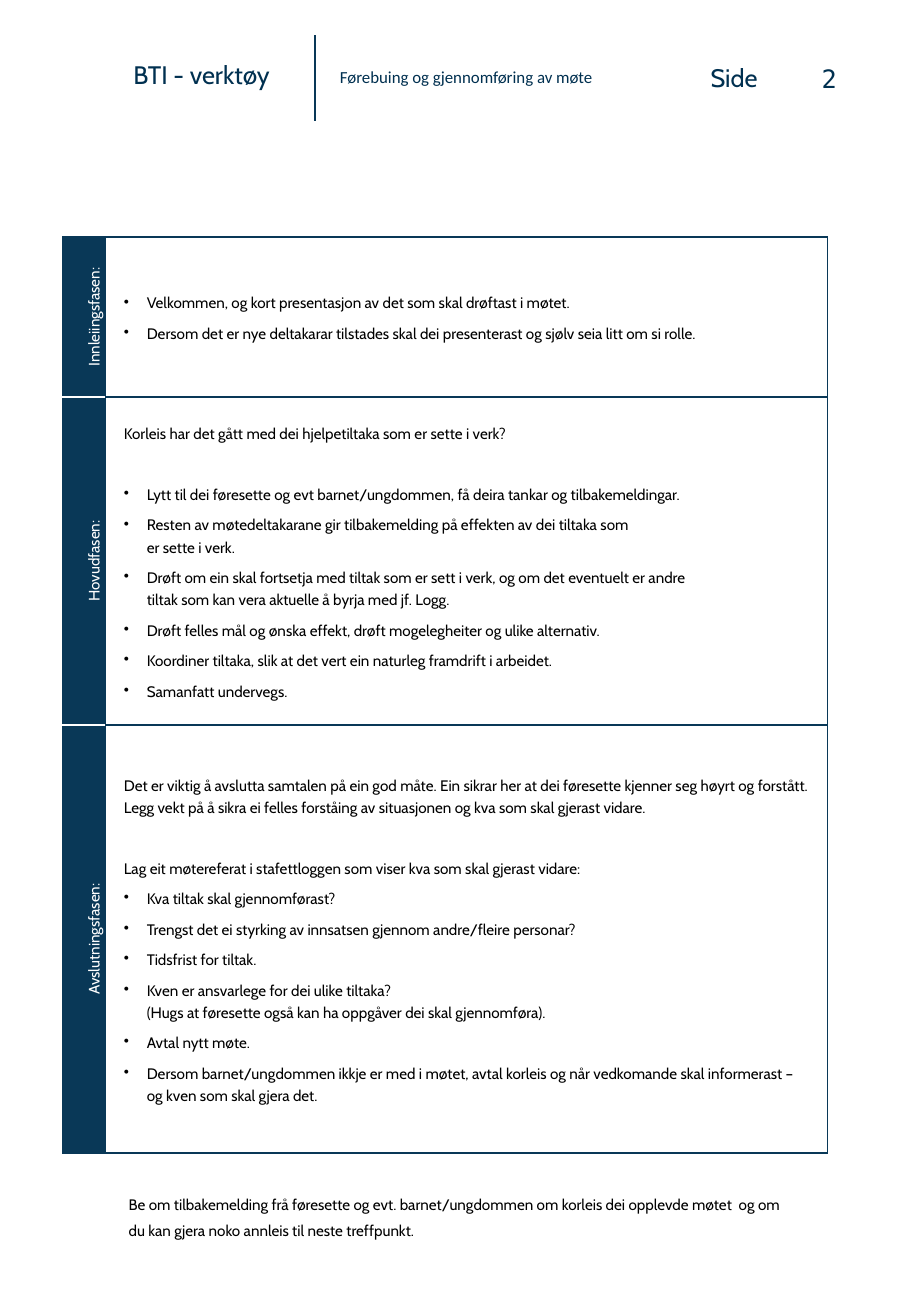
from pptx import Presentation
from pptx.dml.color import RGBColor
from pptx.enum.shapes import MSO_CONNECTOR
from pptx.enum.text import MSO_ANCHOR as Anchor, PP_ALIGN as Align
from pptx.oxml.ns import qn
from pptx.util import Cm, Pt
from lxml.etree import SubElement

COLORS = {"ink": "003050", "navy": "093857", "white": "FFFFFF", "black": "000000"}
FONT = "Cabin"
BLANK_LINE = 18

PHASES = [
    ("Innleiingsfasen:", 3.35, [
        ("bullet", "Velkommen, og kort presentasjon av det som skal drøftast i møtet."),
        ("bullet", "Dersom det er nye deltakarar tilstades skal dei presenterast og sjølv seia litt om si rolle."),
    ]),
    ("Hovudfasen:", 6.86, [
        ("lead", "Korleis har det gått med dei hjelpetiltaka som er sette i verk?"),
        ("bullet", "Lytt til dei føresette og evt barnet/ungdommen, få deira tankar og tilbakemeldingar."),
        ("bullet", "Resten av møtedeltakarane gir tilbakemelding på effekten av dei tiltaka som\ner sette i verk."),
        ("bullet", "Drøft om ein skal fortsetja med tiltak som er sett i verk, og om det eventuelt er andre\n"
                   "tiltak som kan vera aktuelle å byrja med jf. Logg."),
        ("bullet", "Drøft felles mål og ønska effekt, drøft mogelegheiter og ulike alternativ."),
        ("bullet", "Koordiner tiltaka, slik at det vert ein naturleg framdrift i arbeidet."),
        ("bullet", "Samanfatt undervegs."),
    ]),
    ("Avslutningsfasen:", 8.94, [
        ("lead", "Det er viktig å avslutta samtalen på ein god måte. Ein sikrar her at dei føresette kjenner "
                 "seg høyrt og forstått. Legg vekt på å sikra ei felles forståing av situasjonen og kva som "
                 "skal gjerast vidare."),
        ("plain", "Lag eit møtereferat i stafettloggen som viser kva som skal gjerast vidare:"),
        ("bullet", "Kva tiltak skal gjennomførast?"),
        ("bullet", "Trengst det ei styrking av innsatsen gjennom andre/fleire personar?"),
        ("bullet", "Tidsfrist for tiltak."),
        ("bullet", "Kven er ansvarlege for dei ulike tiltaka?\n"
                   "(Hugs at føresette også kan ha oppgåver dei skal gjennomføra)."),
        ("bullet", "Avtal nytt møte."),
        ("bullet", "Dersom barnet/ungdommen ikkje er med i møtet, avtal korleis og når vedkomande skal "
                   "informerast – og kven som skal gjera det."),
    ]),
]


def rgb(name):
    """Return the named colour."""
    return RGBColor.from_string(COLORS[name])


def style(para, size, color, font=FONT, spacing=1.0, align=Align.LEFT):
    """Set the font, line spacing and alignment of a paragraph."""
    para.alignment = align
    para.line_spacing = spacing
    para.font.size = Pt(size)
    para.font.name = font
    para.font.color.rgb = rgb(color)


def add_text(page, text, left, top, width, height, size, color, anchor=Anchor.TOP, **look):
    """Add a one-paragraph text box, measured in centimetres."""
    box = page.shapes.add_textbox(Cm(left), Cm(top), Cm(width), Cm(height))
    frame = box.text_frame
    frame.word_wrap = True
    frame.vertical_anchor = anchor
    para = frame.paragraphs[0]
    para.text = text
    style(para, size, color, **look)


def add_header(page, left, top, height):
    """Draw the heading, divider, topic and page number."""
    add_text(page, "BTI - verktøy", left, top + 0.38, 5.61, 0.89, 15, "ink")
    add_text(page, "Side", left + 12.07, top + 0.43, 3.12, 0.89, 15, "ink")
    divider_left = Cm(left + 4.04)
    divider = page.shapes.add_connector(
        MSO_CONNECTOR.STRAIGHT, divider_left, Cm(top), divider_left, Cm(top + height))
    divider.line.color.rgb = rgb("navy")
    divider.line.width = Pt(1)
    SubElement(divider._element.spPr, qn("a:effectLst"))
    add_text(page, "Førebuing og gjennomføring av møte", left + 4.32, top, 6.81, height,
             10, "ink", Anchor.MIDDLE, font="Calibri", spacing=0.9)
    add_text(page, "2", left + 11.4, top, 3.81, height, 15, "ink", Anchor.MIDDLE,
             font="DejaVu Sans Mono", align=Align.RIGHT)


def set_borders(cell, **overrides):
    """Give a cell navy borders, apart from the sides named."""
    props = cell._tc.get_or_add_tcPr()
    for side in "LRTB":
        line = SubElement(props, qn(f"a:ln{side}"), w=str(Pt(1)))
        fill = SubElement(line, qn("a:solidFill"))
        SubElement(fill, qn("a:srgbClr"), val=COLORS[overrides.get(side, "navy")])


def prepare_cell(cell, **borders):
    """Set the margins, anchor and borders of a cell."""
    cell.margin_left = cell.margin_right = cell.margin_top = cell.margin_bottom = Cm(0.38)
    cell.vertical_anchor = Anchor.MIDDLE
    set_borders(cell, **borders)


def fill_label(cell, label, first, last):
    """Write a rotated phase name on navy."""
    prepare_cell(cell, T="navy" if first else "white", B="navy" if last else "white")
    cell._tc.get_or_add_tcPr().set("vert", "vert270")
    cell.fill.solid()
    cell.fill.fore_color.rgb = rgb("navy")
    para = cell.text_frame.paragraphs[0]
    para.text = label
    style(para, 9, "white", spacing=1.2, align=Align.CENTER)


def fill_body(cell, entries):
    """Write the paragraphs and bullets of a phase."""
    prepare_cell(cell)
    cell.fill.background()
    frame = cell.text_frame
    for index, (kind, text) in enumerate(entries):
        para = frame.add_paragraph() if index else frame.paragraphs[0]
        para.text = text
        if kind == "bullet":
            props = para._p.get_or_add_pPr()
            props.set("marL", str(Cm(0.48)))
            props.set("indent", str(-Cm(0.48)))
            SubElement(props, qn("a:buChar"), char="•")
        para.space_after = Pt(5 + BLANK_LINE if kind == "lead" else 5)
        style(para, 9, "black", spacing=1.2)


def add_phases(page, left, top, label_width, body_width):
    """Draw the table of meeting phases."""
    height = sum(phase[1] for phase in PHASES)
    table = page.shapes.add_table(len(PHASES), 2, Cm(left), Cm(top),
                                  Cm(label_width + body_width), Cm(height)).table
    table.first_row = table.horz_banding = False
    table.columns[0].width = Cm(label_width)
    table.columns[1].width = Cm(body_width)
    for index, (label, row_height, entries) in enumerate(PHASES):
        table.rows[index].height = Cm(row_height)
        fill_label(table.cell(index, 0), label, index == 0, index == len(PHASES) - 1)
        fill_body(table.cell(index, 1), entries)


def add_footer(page, left, top, width, height):
    """Write the closing request for feedback."""
    add_text(page, "Be om tilbakemelding frå føresette og evt. barnet/ungdommen om korleis dei opplevde "
                   "møtet  og om du kan gjera noko annleis til neste treffpunkt.",
             left, top, width, height, 9, "black", spacing=1.4)


def main():
    """Build and save the deck."""
    deck = Presentation()
    deck.slide_width, deck.slide_height = Cm(19.05), Cm(27.51)
    page = deck.slides.add_slide(deck.slide_layouts[6])
    add_header(page, 2.54, 0.74, 1.78)
    add_phases(page, 1.32, 4.95, 0.89, 15.09)
    add_footer(page, 2.44, 24.71, 14.2, 1.27)
    deck.save("out.pptx")


if __name__ == "__main__":
    main()
